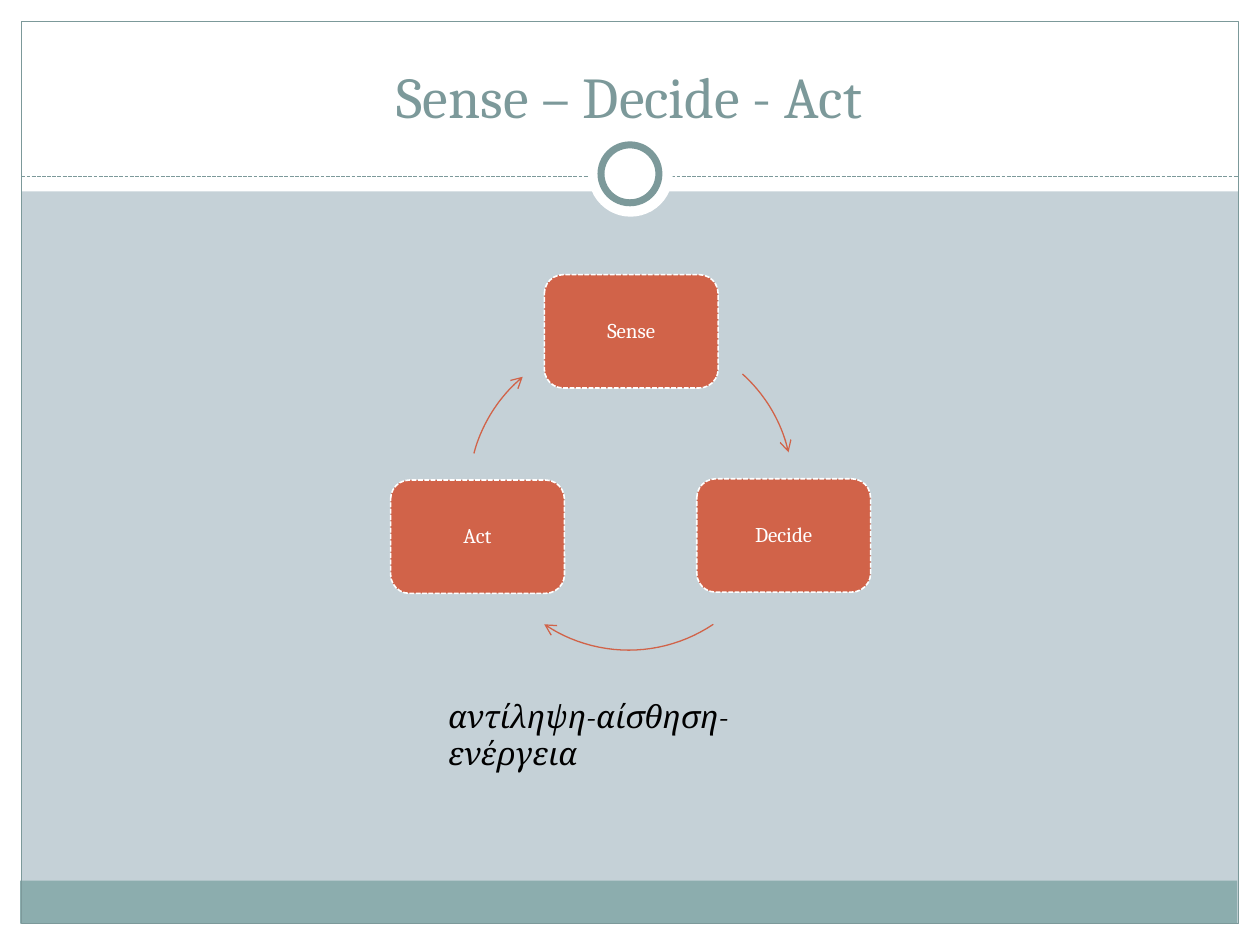
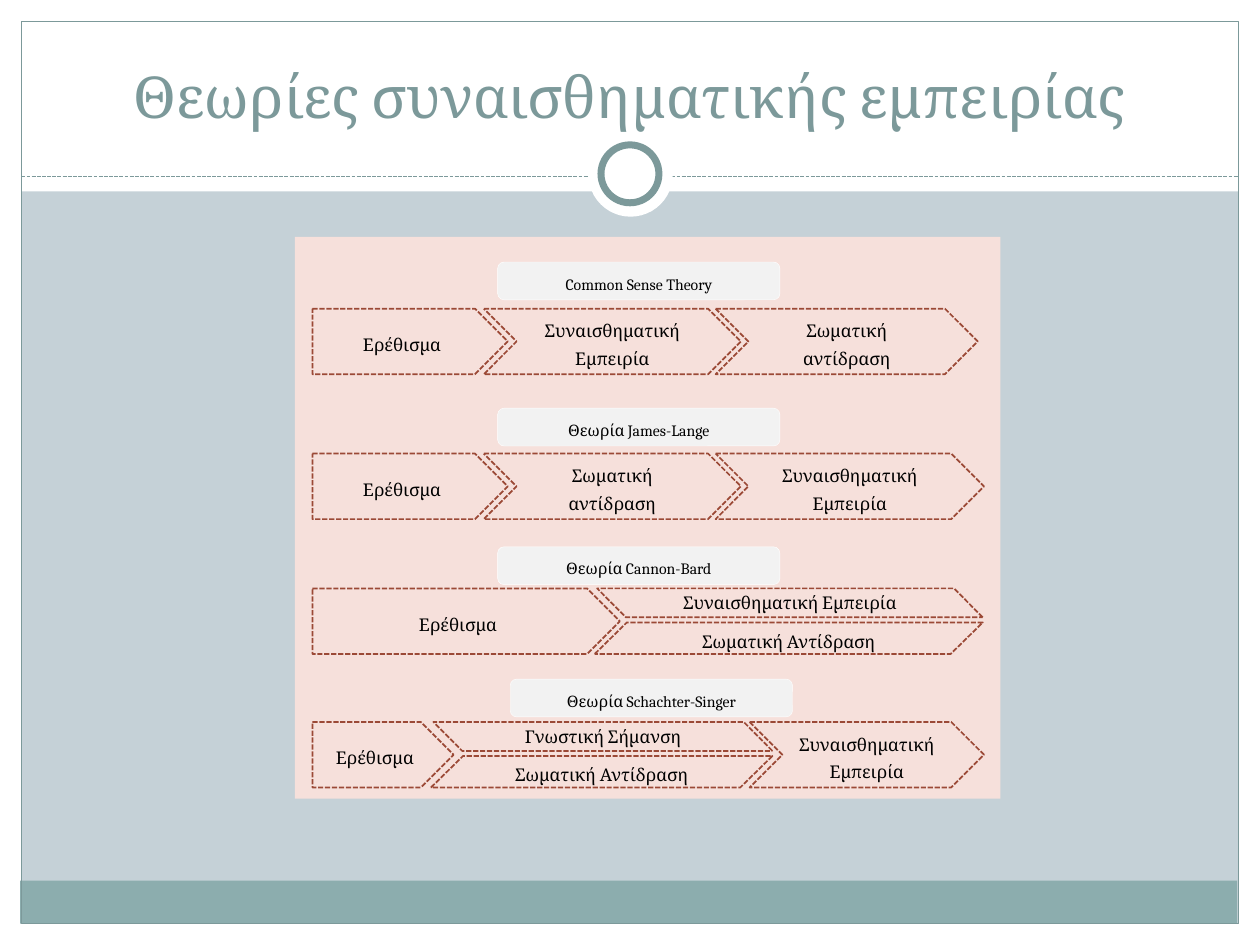
"""Build two slides: the sense-decide-act cycle and the theories of emotional experience."""
from dataclasses import dataclass
from math import cos, radians, sin
from typing import Optional

from lxml.etree import SubElement
from pptx import Presentation
from pptx.dml.color import RGBColor
from pptx.enum.dml import MSO_LINE
from pptx.enum.shapes import MSO_CONNECTOR, MSO_SHAPE as SHAPE
from pptx.enum.text import MSO_ANCHOR as ANCHOR, PP_ALIGN as ALIGN
from pptx.oxml.ns import qn
from pptx.util import Pt

PX = 9144
FONT = "Cambria"
WHITE = RGBColor(0xFF, 0xFF, 0xFF)
BLACK = RGBColor(0x00, 0x00, 0x00)
MIST = RGBColor(0xC5, 0xD1, 0xD7)
TEAL = RGBColor(0x7C, 0x99, 0x9A)
FOOTER = RGBColor(0x8C, 0xAD, 0xAE)
ORANGE = RGBColor(0xD1, 0x63, 0x49)
BLUSH = RGBColor(0xF6, 0xE0, 0xDB)
BRICK = RGBColor(0x9B, 0x49, 0x36)
LABEL_GREY = RGBColor(0xF2, 0xF2, 0xF2)


@dataclass(frozen=True)
class Box:
    left: int
    top: int
    width: int
    height: int

    def emu(self) -> tuple:
        return self.left * PX, self.top * PX, self.width * PX, self.height * PX


@dataclass(frozen=True)
class Outline:
    color: RGBColor
    width: float
    dashed: bool = False


@dataclass(frozen=True)
class TextStyle:
    size: int
    color: RGBColor = BLACK
    spacing: Optional[float] = None
    after: int = 0
    margins: tuple = (10, 5)
    anchor: ANCHOR = ANCHOR.MIDDLE
    align: ALIGN = ALIGN.CENTER
    italic: bool = False


@dataclass(frozen=True)
class Arc:
    x: int
    y: int
    start: int
    end: int


@dataclass(frozen=True)
class Stage:
    text: str
    left: int
    width: int
    kind: SHAPE = SHAPE.CHEVRON


@dataclass(frozen=True)
class Split:
    upper: str
    lower: str
    left: int
    width: int


@dataclass(frozen=True)
class Theory:
    name: str
    label_left: int
    label_top: int
    top: int
    steps: tuple


TITLE = TextStyle(33, TEAL, anchor=ANCHOR.BOTTOM)
NODE = TextStyle(12, WHITE, 0.9, margins=(5, 5))
CAPTION = TextStyle(18, anchor=ANCHOR.TOP, align=ALIGN.LEFT, italic=True)
STAGE = TextStyle(10, spacing=1.3)
UPPER = TextStyle(10, margins=(4, 0))
LOWER = TextStyle(10, spacing=1.3, after=6, margins=(4, 0))
LABEL = TextStyle(9, spacing=1.3, after=6)

THIN = Outline(TEAL, 0.75)
NODE_EDGE = Outline(WHITE, 0.9, True)
STAGE_EDGE = Outline(BRICK, 1, True)
LABEL_EDGE = Outline(WHITE, 0.25)

MARGINS = (Box(0, 733, 1000, 17), Box(0, 0, 1000, 152), Box(0, 0, 17, 750), Box(983, 0, 17, 750))
NODES = (("Sense", 432, 218), ("Decide", 553, 380), ("Act", 310, 381))
ARC_RADIUS = 120
ARCS = (Arc(509, 386, -48, -13), Arc(499, 396, 56, 124), Arc(492, 391, 195, 230))

STIMULUS = "Ερέθισμα"
FEELING = "Συναισθηματική Εμπειρία"
REACTION = "Σωματική αντίδραση"
BODY = "Σωματική Αντίδραση"
STAGE_HEIGHT = 52
THEORIES = (
    Theory("Common Sense Theory", 395, 208, 245, (
        Stage(STIMULUS, 248, 155, SHAPE.PENTAGON), Stage(FEELING, 384, 204), Stage(REACTION, 568, 208))),
    Theory("Θεωρία James-Lange", 395, 324, 360, (
        Stage(STIMULUS, 248, 155, SHAPE.PENTAGON), Stage(REACTION, 384, 204), Stage(FEELING, 568, 213))),
    Theory("Θεωρία Cannon-Bard", 395, 434, 467, (
        Stage(STIMULUS, 248, 244, SHAPE.PENTAGON), Split(FEELING, BODY, 472, 308))),
    Theory("Θεωρία Schachter-Singer", 405, 539, 573, (
        Stage(STIMULUS, 248, 112, SHAPE.PENTAGON), Split("Γνωστική Σήμανση", BODY, 342, 271),
        Stage(FEELING, 595, 186))),
)


def set_outline(line, outline: Outline) -> None:
    line.color.rgb = outline.color
    line.width = Pt(outline.width)
    if outline.dashed:
        line.dash_style = MSO_LINE.SQUARE_DOT


def write(sp, text: str, style: TextStyle) -> None:
    tf = sp.text_frame
    tf.text = text
    tf.word_wrap = True
    tf.vertical_anchor = style.anchor
    side, edge = style.margins
    tf.margin_left = tf.margin_right = side * PX
    tf.margin_top = tf.margin_bottom = edge * PX
    p = tf.paragraphs[0]
    p.alignment = style.align
    if style.spacing:
        p.line_spacing = style.spacing
    if style.after:
        p.space_after = Pt(style.after)
    font = p.runs[0].font
    font.name, font.size, font.italic = FONT, Pt(style.size), style.italic
    font.color.rgb = style.color


def add_box(s, kind: SHAPE, box: Box, fill: Optional[RGBColor], outline: Optional[Outline] = None):
    sp = s.shapes.add_shape(kind, *box.emu())
    sp.shadow.inherit = False
    if fill is None:
        sp.fill.background()
    else:
        sp.fill.solid()
        sp.fill.fore_color.rgb = fill
    if outline is None:
        sp.line.fill.background()
    else:
        set_outline(sp.line, outline)
    return sp


def add_text(s, box: Box, text: str, style: TextStyle) -> None:
    write(s.shapes.add_textbox(*box.emu()), text, style)


def add_themed_slide(prs, title: str):
    s = prs.slides.add_slide(prs.slide_layouts[6])
    s.background.fill.solid()
    s.background.fill.fore_color.rgb = MIST
    for margin in MARGINS:
        add_box(s, SHAPE.RECTANGLE, margin, WHITE)
    add_box(s, SHAPE.RECTANGLE, Box(16, 699, 966, 34), FOOTER)
    add_box(s, SHAPE.RECTANGLE, Box(17, 17, 966, 716), None, THIN)
    rule = s.shapes.add_connector(MSO_CONNECTOR.STRAIGHT, 17 * PX, 140 * PX, 983 * PX, 140 * PX)
    set_outline(rule.line, Outline(TEAL, 0.75, True))
    SubElement(rule.element.spPr, qn("a:effectLst"))
    add_box(s, SHAPE.OVAL, Box(467, 105, 67, 67), WHITE)
    add_box(s, SHAPE.OVAL, Box(477, 115, 46, 46), WHITE, Outline(TEAL, 4))
    add_text(s, Box(33, 25, 933, 83), title, TITLE)
    return s


def add_arc(s, arc: Arc, steps: int = 24) -> None:
    angles = [radians(arc.start + (arc.end - arc.start) * i / steps) for i in range(steps + 1)]
    points = [(round((arc.x + ARC_RADIUS * cos(a)) * PX), round((arc.y + ARC_RADIUS * sin(a)) * PX))
              for a in angles]
    builder = s.shapes.build_freeform(*points[0])
    builder.add_line_segments(points[1:], close=False)
    sp = builder.convert_to_shape()
    sp.shadow.inherit = False
    sp.fill.background()
    set_outline(sp.line, Outline(ORANGE, 0.75))
    SubElement(sp.element.spPr.find(qn("a:ln")), qn("a:tailEnd"), type="arrow")


def add_stage(s, stage: Stage, top: int) -> None:
    sp = add_box(s, stage.kind, Box(stage.left, top, stage.width, STAGE_HEIGHT), BLUSH, STAGE_EDGE)
    write(sp, stage.text, STAGE)


def add_split(s, split: Split, top: int) -> None:
    lower = add_box(s, SHAPE.PARALLELOGRAM, Box(split.left, top + 27, split.width, 25), BLUSH, STAGE_EDGE)
    lower.adjustments[0] = 1.02
    write(lower, split.lower, LOWER)
    upper = add_box(s, SHAPE.PARALLELOGRAM, Box(split.left + 2, top, split.width - 2, 23), BLUSH, STAGE_EDGE)
    upper.adjustments[0] = 0.99
    upper.element.spPr.find(qn("a:xfrm")).set("flipH", "1")
    write(upper, split.upper, UPPER)


def add_theory(s, theory: Theory) -> None:
    for step in theory.steps:
        if isinstance(step, Split):
            add_split(s, step, theory.top)
        else:
            add_stage(s, step, theory.top)
    label = add_box(s, SHAPE.ROUNDED_RECTANGLE, Box(theory.label_left, theory.label_top, 224, 30),
                    LABEL_GREY, LABEL_EDGE)
    write(label, theory.name, LABEL)


def build_cycle(prs) -> None:
    s = add_themed_slide(prs, "Sense – Decide - Act")
    for (text, left, top), arc in zip(NODES, ARCS):
        write(add_box(s, SHAPE.ROUNDED_RECTANGLE, Box(left, top, 138, 90), ORANGE, NODE_EDGE), text, NODE)
        add_arc(s, arc)
    add_text(s, Box(346, 548, 315, 71), "αντίληψη-αίσθηση-ενέργεια", CAPTION)


def build_theories(prs) -> None:
    s = add_themed_slide(prs, "Θεωρίες συναισθηματικής εμπειρίας")
    add_box(s, SHAPE.RECTANGLE, Box(234, 188, 560, 446), BLUSH)
    for theory in THEORIES:
        add_theory(s, theory)


def main() -> None:
    prs = Presentation()
    prs.slide_width, prs.slide_height = 1000 * PX, 750 * PX
    build_cycle(prs)
    build_theories(prs)
    prs.save("out.pptx")


if __name__ == "__main__":
    main()
